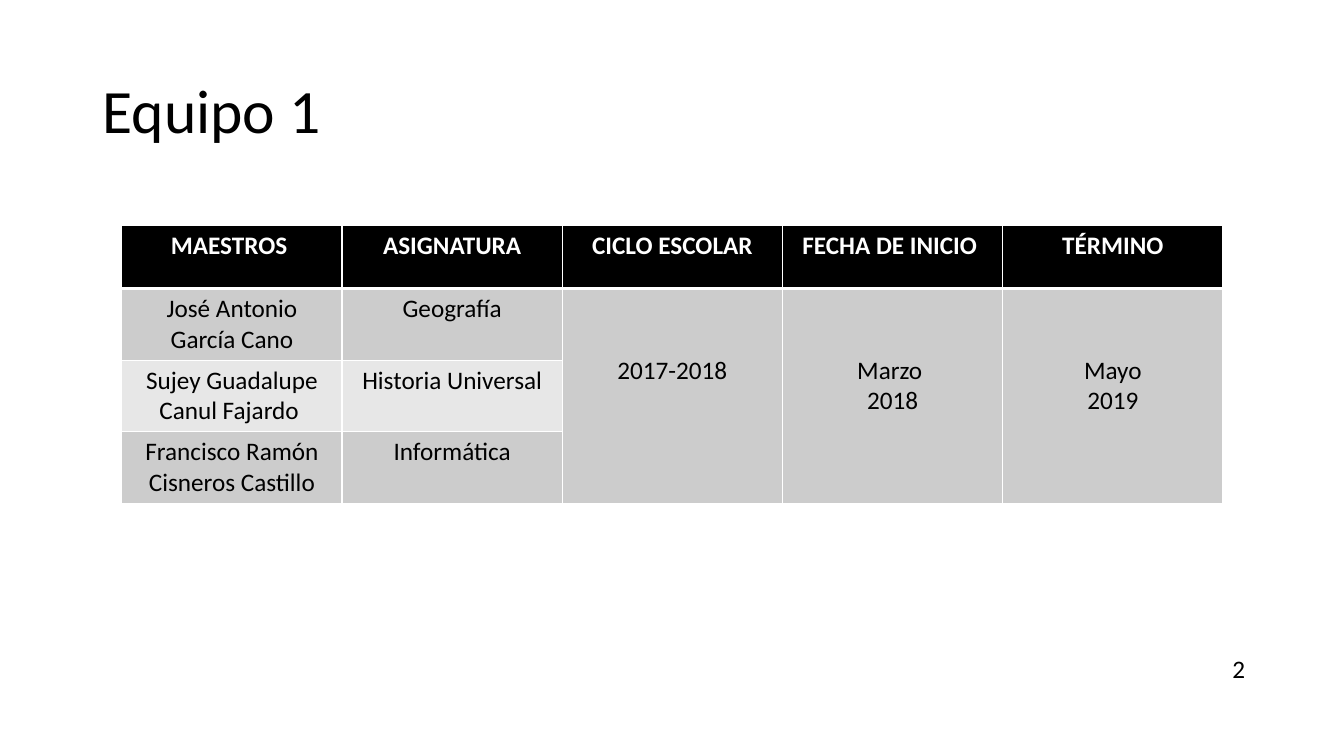
from typing import NamedTuple

from lxml import etree
from pptx import Presentation
from pptx import util as u
from pptx.dml.color import RGBColor
from pptx.enum import text
from pptx.oxml import ns

BLACK, WHITE, DARK, LIGHT = "000000", "FFFFFF", "CCCCCC", "E7E7E7"
COL_WIDTH = u.Cm(5.55)
HEADER_HEIGHT, BODY_HEIGHT = u.Cm(1.6), u.Cm(1.8)
MERGED_TOP_MARGIN = u.Cm(1.68)


class Teacher(NamedTuple):
    name: str
    subject: str


HEADERS = ["MAESTROS ", "ASIGNATURA", "CICLO ESCOLAR", "FECHA DE INICIO ", "TÉRMINO"]
TEACHERS = [
    Teacher("José Antonio García Cano", "Geografía"),
    Teacher("Sujey Guadalupe Canul Fajardo ", "Historia Universal"),
    Teacher("Francisco Ramón Cisneros Castillo", "Informática"),
]
SHARED = ["2017-2018", "Marzo \n2018", "Mayo\n2019"]


def color(value: str) -> RGBColor:
    return RGBColor.from_string(value)


def format_text(tf, size: float, ink: str, align, bold: bool = False) -> None:
    for p in tf.paragraphs:
        p.alignment = align
        for r in p.runs:
            r.font.name = "Calibri"
            r.font.size = u.Pt(size)
            r.font.bold = bold
            r.font.color.rgb = color(ink)


def set_borders(cell, top: float, bottom: float) -> None:
    tc_pr = cell._tc.get_or_add_tcPr()
    sides = {"lnL": 1, "lnR": 1, "lnT": top, "lnB": bottom}
    for i, (side, width) in enumerate(sides.items()):
        ln = etree.Element(ns.qn(f"a:{side}"), w=str(u.Pt(width)))
        fill = etree.SubElement(ln, ns.qn("a:solidFill"))
        etree.SubElement(fill, ns.qn("a:srgbClr"), val=WHITE)
        tc_pr.insert(i, ln)


def add_title(s, title: str) -> None:
    sp = s.shapes.title
    sp.left, sp.top, sp.width, sp.height = u.Cm(2.33), u.Cm(1.01), u.Cm(29.21), u.Cm(3.68)
    tf = sp.text_frame
    tf.text = title
    tf.vertical_anchor = text.MSO_ANCHOR.MIDDLE
    tf.paragraphs[0].line_spacing = 0.9
    format_text(tf, 44, BLACK, text.PP_ALIGN.LEFT)


def add_schedule(s) -> None:
    rows = [HEADERS] + [[t.name, t.subject, "", "", ""] for t in TEACHERS]
    rows[1][2:] = SHARED
    n_rows, n_cols = len(rows), len(HEADERS)
    height = HEADER_HEIGHT + BODY_HEIGHT * len(TEACHERS)
    table = s.shapes.add_table(
        n_rows, n_cols, u.Cm(3.07), u.Cm(5.67), COL_WIDTH * n_cols, height
    ).table
    for col in table.columns:
        col.width = COL_WIDTH
    for i, values in enumerate(rows):
        header = i == 0
        table.rows[i].height = HEADER_HEIGHT if header else BODY_HEIGHT
        for j, value in enumerate(values):
            cell = table.cell(i, j)
            cell.text = value
            shade = LIGHT if i == 2 and j < 2 else DARK
            cell.fill.solid()
            cell.fill.fore_color.rgb = color(BLACK if header else shade)
            set_borders(cell, 3 if i == 1 else 1, 3 if header else 1)
            format_text(
                cell.text_frame, 18, WHITE if header else BLACK,
                text.PP_ALIGN.CENTER, header,
            )
    for j in range(n_cols - len(SHARED), n_cols):
        cell = table.cell(1, j)
        cell.merge(table.cell(n_rows - 1, j))
        cell.margin_top = MERGED_TOP_MARGIN


def add_page_number(s, number: str) -> None:
    sp = s.shapes.add_textbox(u.Cm(30.81), u.Cm(16.33), u.Cm(0.84), u.Cm(1.03))
    tf = sp.text_frame
    tf.word_wrap = False
    tf.auto_size = text.MSO_AUTO_SIZE.SHAPE_TO_FIT_TEXT
    tf.text = number
    format_text(tf, 18, BLACK, text.PP_ALIGN.LEFT)


def main() -> None:
    prs = Presentation()
    prs.slide_width, prs.slide_height = u.Cm(33.87), u.Cm(19.05)
    s = prs.slides.add_slide(prs.slide_layouts[5])
    add_title(s, "Equipo 1")
    add_schedule(s)
    add_page_number(s, "2")
    prs.save("out.pptx")


if __name__ == "__main__":
    main()
